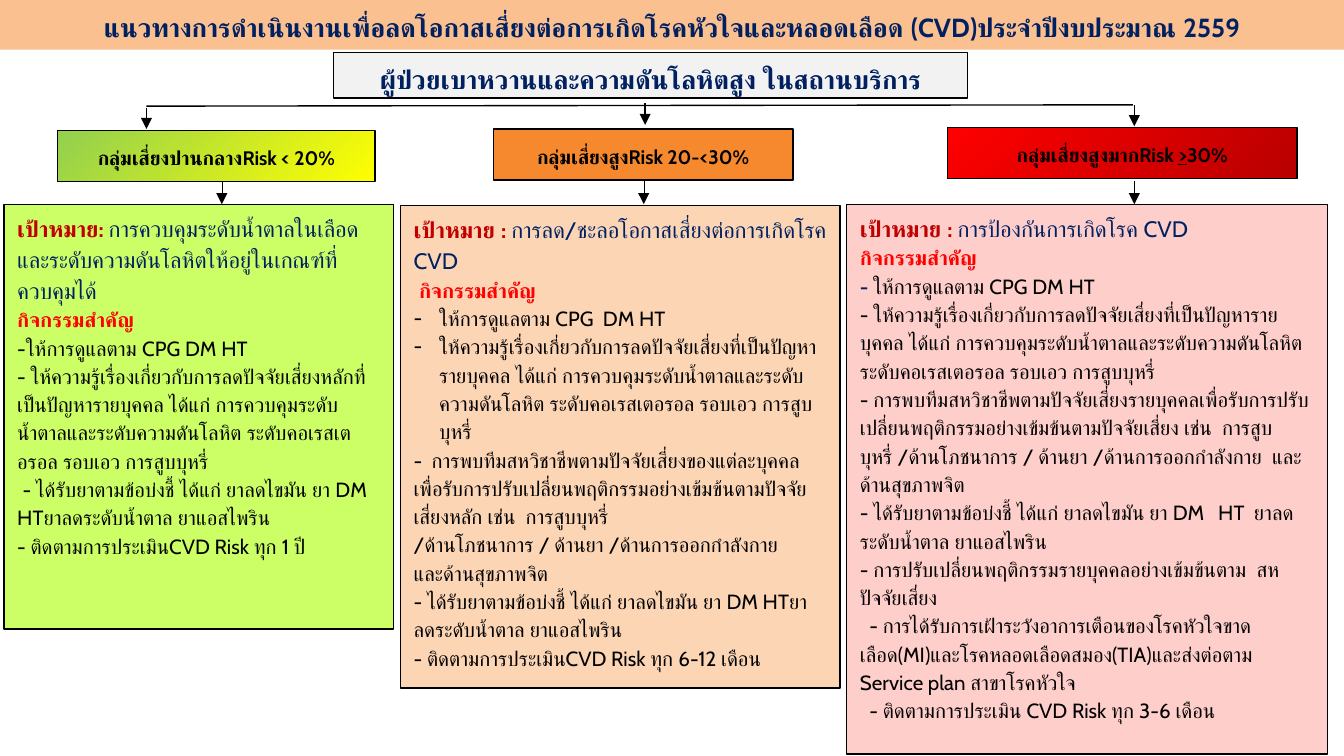
"""Build the CVD risk reduction guideline slide."""
from lxml import etree
from pptx import Presentation
from pptx.dml.color import RGBColor
from pptx.enum.shapes import MSO_CONNECTOR as CONN, MSO_SHAPE as SHAPE
from pptx.enum.text import MSO_ANCHOR as ANCHOR, PP_ALIGN as ALIGN
from pptx.oxml.ns import qn
from pptx.util import Inches, Pt

FONT = "Cabin"
BLACK = RGBColor(0x00, 0x00, 0x00)
NAVY = RGBColor(0x00, 0x20, 0x60)
CRIMSON = RGBColor(0xC0, 0x00, 0x00)
RED = RGBColor(0xFF, 0x00, 0x00)
DARK_RED = RGBColor(0xB8, 0x00, 0x00)
PEACH = RGBColor(0xFA, 0xC0, 0x90)
GREY = RGBColor(0xF2, 0xF2, 0xF2)
GREEN = RGBColor(0x92, 0xD0, 0x50)
YELLOW = RGBColor(0xFF, 0xFF, 0x00)
ORANGE = RGBColor(0xF6, 0x88, 0x2E)
LIME = RGBColor(0xCC, 0xFF, 0x66)
CREAM = RGBColor(0xFC, 0xD5, 0xB5)
PINK = RGBColor(0xFE, 0xCE, 0xCA)

TITLE = "แนวทางการดำเนินงานเพื่อลดโอกาสเสี่ยงต่อการเกิดโรคหัวใจและหลอดเลือด (CVD)ประจำปีงบประมาณ 2559"
PATIENTS = "ผู้ป่วยเบาหวานและความดันโลหิตสูง ในสถานบริการ"
ACTIVITIES = "กิจกรรมสำคัญ"

GROUPS = [
    {
        "label": ["กลุ่มเสี่ยงปานกลางRisk < 20%"],
        "label_box": (0.43, 0.97, 2.36, 0.38), "label_fill": (GREEN, YELLOW),
        "box": (0.03, 1.52, 2.9, 3.16), "fill": (LIME,),
        "goal": ("เป้าหมาย: ", "การควบคุมระดับน้ำตาลในเลือดและระดับความดันโลหิตให้อยู่ในเกณฑ์ที่ควบคุมได้"),
        "head_indent": 0,
        "items": [
            ("-ให้การดูแลตาม CPG DM HT", {}),
            ("- ให้ความรู้เรื่องเกี่ยวกับการลดปัจจัยเสี่ยงหลักที่เป็นปัญหารายบุคคล ได้แก่ การควบคุมระดับน้ำตาลและระดับความดันโลหิต ระดับคอเรสเตอรอล รอบเอว การสูบบุหรี่", {}),
            ("- ได้รับยาตามข้อบ่งชี้ ได้แก่ ยาลดไขมัน ยา DM HTยาลดระดับน้ำตาล ยาแอสไพริน", {"first": 0.04}),
            ("- ติดตามการประเมินCVD Risk ทุก 1 ปี", {}),
        ],
    },
    {
        "label": ["กลุ่มเสี่ยงสูงRisk 20-<30%"],
        "label_box": (3.67, 0.96, 2.23, 0.38), "label_fill": (ORANGE,),
        "box": (2.98, 1.53, 3.27, 3.59), "fill": (CREAM,),
        "goal": ("เป้าหมาย : ", "การลด/ชะลอโอกาสเสี่ยงต่อการเกิดโรค CVD"),
        "head_indent": 0.04,
        "items": [
            ("ให้การดูแลตาม CPG  DM HT", {"bullet": "-"}),
            ("ให้ความรู้เรื่องเกี่ยวกับการลดปัจจัยเสี่ยงที่เป็นปัญหารายบุคคล ได้แก่ การควบคุมระดับน้ำตาลและระดับความดันโลหิต ระดับคอเรสเตอรอล รอบเอว การสูบบุหรี่", {"bullet": "-"}),
            ("-  การพบทีมสหวิชาชีพตามปัจจัยเสี่ยงของแต่ละบุคคลเพื่อรับการปรับเปลี่ยนพฤติกรรมอย่างเข้มข้นตามปัจจัยเสี่ยงหลัก เช่น  การสูบบุหรี่", {}),
            ("/ด้านโภชนาการ / ด้านยา /ด้านการออกกำลังกาย", {}),
            ("และด้านสุขภาพจิต", {}),
            ("- ได้รับยาตามข้อบ่งชี้ ได้แก่ ยาลดไขมัน ยา DM HTยาลดระดับน้ำตาล ยาแอสไพริน", {}),
            ("- ติดตามการประเมินCVD Risk ทุก 6-12 เดือน", {}),
        ],
    },
    {
        "label": ["กลุ่มเสี่ยงสูงมากRisk ", (">", {"underline": True}), "30%"],
        "label_box": (7.05, 0.95, 2.6, 0.38), "label_fill": (RED, DARK_RED),
        "box": (6.3, 1.52, 3.58, 4.09), "fill": (PINK,),
        "goal": ("เป้าหมาย : ", "การป้องกันการเกิดโรค CVD"),
        "head_indent": 0,
        "items": [
            ([("-", {"bold": True, "color": NAVY}), " ให้การดูแลตาม CPG DM HT"], {}),
            ("- ให้ความรู้เรื่องเกี่ยวกับการลดปัจจัยเสี่ยงที่เป็นปัญหารายบุคคล ได้แก่ การควบคุมระดับน้ำตาลและระดับความดันโลหิต ระดับคอเรสเตอรอล รอบเอว การสูบบุหรี่", {}),
            ("- การพบทีมสหวิชาชีพตามปัจจัยเสี่ยงรายบุคคลเพื่อรับการปรับเปลี่ยนพฤติกรรมอย่างเข้มข้นตามปัจจัยเสี่ยง เช่น  การสูบบุหรี่ /ด้านโภชนาการ / ด้านยา /ด้านการออกกำลังกาย  และด้านสุขภาพจิต", {}),
            ("- ได้รับยาตามข้อบ่งชี้ ได้แก่ ยาลดไขมัน ยา DM   HT  ยาลดระดับน้ำตาล ยาแอสไพริน", {}),
            ("- การปรับเปลี่ยนพฤติกรรมรายบุคคลอย่างเข้มข้นตาม  สหปัจจัยเสี่ยง", {}),
            ("- การได้รับการเฝ้าระวังอาการเตือนของโรคหัวใจขาดเลือด(MI)และโรคหลอดเลือดสมอง(TIA)และส่งต่อตาม Service plan สาขาโรคหัวใจ", {"first": 0.07}),
            ("- ติดตามการประเมิน CVD Risk ทุก 3-6 เดือน", {"first": 0.07}),
        ],
    },
]

BRANCH = (1.09, 0.79, 8.43, 0.78)
ARROWS = [
    (1.09, 0.8, 0.96, 0.75), (4.8, 0.77, 0.93, 0.75), (8.44, 0.78, 0.94, 0.75),
    (1.65, 1.35, 1.52, 0.25), (4.79, 1.34, 1.52, 0.25), (8.44, 1.35, 1.52, 0.25),
]


def place(sp, box):
    sp.left, sp.top, sp.width, sp.height = map(Inches, box)


def paint(sp, colors):
    if len(colors) == 1:
        sp.fill.solid()
        sp.fill.fore_color.rgb = colors[0]
        return
    sp.fill.gradient()
    sp.fill.gradient_angle = 315
    for stop, color in zip(sp.fill.gradient_stops, colors):
        stop.color.rgb = color


def add_box(shapes, box, colors, anchor=ANCHOR.TOP):
    sp = shapes.add_shape(SHAPE.RECTANGLE, *map(Inches, box))
    sp.shadow.inherit = False
    paint(sp, colors)
    sp.line.color.rgb = BLACK
    sp.line.width = Pt(0.75)
    sp.text_frame.word_wrap = True
    sp.text_frame.vertical_anchor = anchor
    return sp


def add_line(shapes, x1, y1, x2, y2, width=0.75, arrow=False):
    line = shapes.add_connector(CONN.STRAIGHT, *map(Inches, (x1, y1, x2, y2)))
    line.line.color.rgb = BLACK
    line.line.width = Pt(width)
    if arrow:
        etree.SubElement(line.line._get_or_add_ln(), qn("a:tailEnd"), type="triangle")
    etree.SubElement(line._element.spPr, qn("a:effectLst"))


def write(tf, text, align=ALIGN.LEFT, first=0, bullet=None, **style):
    p = tf.paragraphs[0]
    if p.runs:
        p = tf.add_paragraph()
    p.alignment = align
    p.line_spacing = 1.15
    p.space_before = Pt(0)
    pPr = p._p.get_or_add_pPr()
    hang = 0.19 if bullet else 0
    pPr.set("marL", str(Inches(hang)))
    pPr.set("indent", str(Inches(first - hang)))
    if bullet:
        etree.SubElement(pPr, qn("a:buFont"), typeface=FONT)
        etree.SubElement(pPr, qn("a:buChar"), char=bullet)
    for part in [text] if isinstance(text, str) else text:
        words, extra = (part, {}) if isinstance(part, str) else part
        look = {"size": 11, "bold": False, "color": BLACK, "underline": False, **style, **extra}
        r = p.add_run()
        r.text = words
        r.font.name = FONT
        r.font.size = Pt(look["size"])
        r.font.bold = look["bold"]
        r.font.underline = look["underline"]
        r.font.color.rgb = look["color"]


def main():
    prs = Presentation()
    prs.slide_width = Inches(10)
    prs.slide_height = prs.slide_width * 9 // 16
    slide = prs.slides.add_slide(prs.slide_layouts[5])
    shapes = slide.shapes
    heading = {"align": ALIGN.CENTER, "size": 14, "bold": True, "color": NAVY}

    title = shapes.title
    place(title, (0, 0, 10, 0.37))
    paint(title, (PEACH,))
    title.text_frame.vertical_anchor = ANCHOR.TOP
    write(title.text_frame, TITLE, **heading)

    write(add_box(shapes, (2.48, 0.39, 4.72, 0.34), (GREY,)).text_frame, PATIENTS, **heading)

    add_line(shapes, *BRANCH)
    for x, top, bottom, width in ARROWS:
        add_line(shapes, x, top, x, bottom, width, arrow=True)

    for group in GROUPS:
        label = add_box(shapes, group["label_box"], group["label_fill"], ANCHOR.MIDDLE)
        write(label.text_frame, group["label"], align=ALIGN.CENTER, size=10.5, bold=True)
        tf = add_box(shapes, group["box"], group["fill"]).text_frame
        goal, aim = group["goal"]
        write(tf, [(goal, {"bold": True, "color": CRIMSON}), aim], size=12, color=NAVY)
        write(tf, ACTIVITIES, first=group["head_indent"], bold=True, color=RED)
        for text, layout in group["items"]:
            write(tf, text, **layout)

    prs.save("out.pptx")


if __name__ == "__main__":
    main()
